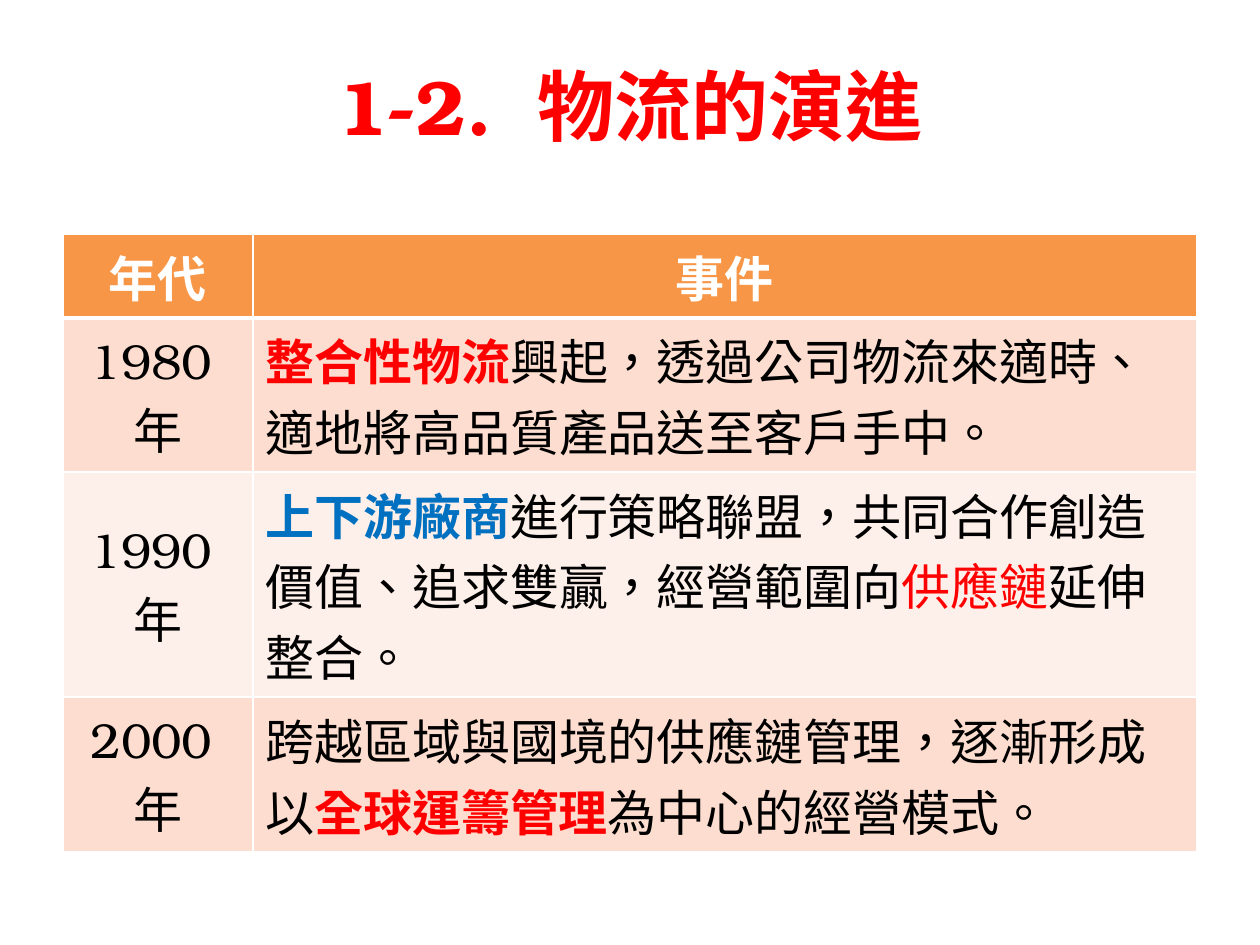
import pptx
import pptx.util
import pptx.dml.color
import pptx.enum.lang
import pptx.enum.text
import pptx.oxml
import pptx.oxml.ns

Pt = pptx.util.Pt
CENTER = pptx.enum.text.PP_ALIGN.CENTER
LEFT = pptx.enum.text.PP_ALIGN.LEFT
MIDDLE = pptx.enum.text.MSO_ANCHOR.MIDDLE

COLORS = {
    "red": "FF0000",
    "blue": "0070C0",
    "black": "000000",
    "white": "FFFFFF",
    "header": "F79646",
    "band_dark": "FCDDCF",
    "band_light": "FDEFE9",
}


def add_text(paragraph, text, size=28, color="black", bold=False, align=LEFT):
    paragraph.alignment = align
    run = paragraph.add_run()
    run.text = text
    run.font.name = "TeX Gyre Bonum"
    run.font.size = Pt(size)
    run.font.bold = bold
    run.font.color.rgb = pptx.dml.color.RGBColor.from_string(COLORS[color])
    run.font.language_id = pptx.enum.lang.MSO_LANGUAGE_ID.TRADITIONAL_CHINESE


def format_cell(cell, fill, bottom_width=1):
    cell.vertical_anchor = MIDDLE
    properties = cell._tc.get_or_add_tcPr()
    for side in ("L", "R", "T", "B"):
        width = Pt(bottom_width if side == "B" else 1)
        properties.append(pptx.oxml.parse_xml(
            f'<a:ln{side} {pptx.oxml.ns.nsdecls("a")} w="{width}"><a:solidFill>'
            f'<a:srgbClr val="{COLORS["white"]}"/></a:solidFill></a:ln{side}>'))
    cell.fill.solid()
    cell.fill.fore_color.rgb = pptx.dml.color.RGBColor.from_string(COLORS[fill])


presentation = pptx.Presentation()
presentation.slide_width, presentation.slide_height = Pt(720), Pt(540)
slide = presentation.slides.add_slide(presentation.slide_layouts[5])

# Title
title = slide.shapes.title
title.left, title.top, title.width, title.height = Pt(36), Pt(15), Pt(648), Pt(90)
title.text_frame.vertical_anchor = MIDDLE
title.text_frame.auto_size = pptx.enum.text.MSO_AUTO_SIZE.NONE
add_text(title.text_frame.paragraphs[0], "1-2. 物流的演進",
         size=44, color="red", bold=True, align=CENTER)

# Events of each decade, as (text, color, bold) parts
headings = ["年代", "事件"]
events = [
    ("1980年", [
        ("整合性物流", "red", True),
        ("興起，透過公司物流來適時、適地將高品質產品送至客戶手中。", "black", False),
    ]),
    ("1990年", [
        ("上下游廠商", "blue", True),
        ("進行策略聯盟，共同合作創造價值、追求雙贏，經營範圍向", "black", False),
        ("供應鏈", "red", False),
        ("延伸整合。", "black", False),
    ]),
    ("2000年", [
        ("跨越區域與國境的供應鏈管理，逐漸形成以", "black", False),
        ("全球運籌管理", "red", True),
        ("為中心的經營模式。", "black", False),
    ]),
]

# Table; rows grow to fit their text
row_height = 29.2
row_count = len(events) + 1
table = slide.shapes.add_table(row_count, 2, Pt(36), Pt(134), Pt(648),
                               Pt(row_height * row_count)).table
table.columns[0].width, table.columns[1].width = Pt(108.5), Pt(539.5)

# Header row
for column, heading in enumerate(headings):
    cell = table.cell(0, column)
    format_cell(cell, "header", bottom_width=3)
    add_text(cell.text_frame.paragraphs[0], heading,
             color="white", bold=True, align=CENTER)

# Banded event rows
for row, (decade, parts) in enumerate(events, start=1):
    decade_cell, event_cell = table.cell(row, 0), table.cell(row, 1)
    for cell in (decade_cell, event_cell):
        format_cell(cell, "band_dark" if row % 2 else "band_light")
    add_text(decade_cell.text_frame.paragraphs[0], decade, align=CENTER)
    for text, color, bold in parts:
        add_text(event_cell.text_frame.paragraphs[0], text, color=color, bold=bold)

presentation.save("out.pptx")
